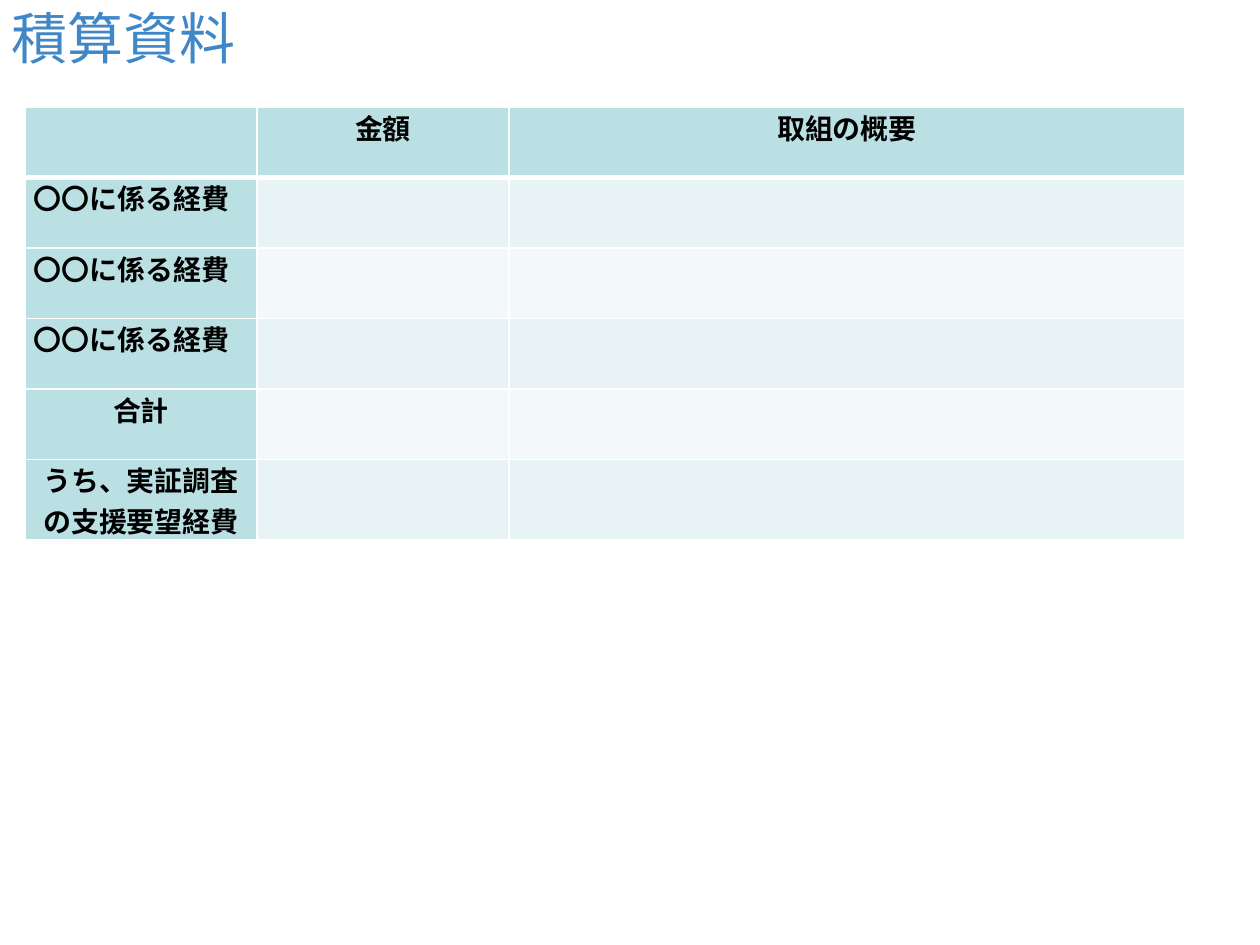
from lxml import etree
from pptx import Presentation
from pptx.dml.color import RGBColor
from pptx.enum.text import MSO_ANCHOR, MSO_AUTO_SIZE, PP_ALIGN
from pptx.oxml.ns import qn
from pptx.util import Pt

LEFT, MID, JUST = PP_ALIGN.LEFT, PP_ALIGN.CENTER, PP_ALIGN.JUSTIFY
CENTER, NO_FIT = MSO_ANCHOR.MIDDLE, MSO_AUTO_SIZE.NONE
FACE = "Noto Sans CJK JP"
HEAD, BANDS = "BBE0E3", ("F3F9FA", "E7F3F4")
COLS = (232, 252, 676)
HIGH = 423
COST = ("〇〇に係る経費", JUST)
HEADS = (("", MID), ("金額", MID), ("取組の概要", MID))
ROWS = (COST, COST, COST, ("合計", MID), ("うち、実証調査の支援要望経費", MID))


def px(num):
    """Turn pixels into EMU."""
    return round(num * 914400 / 126)


def color(code):
    """Turn a hex string into a colour."""
    return RGBColor.from_string(code)


def apply(item, form):
    """Set attributes from a dict of format values."""
    for key, val in form.items():
        setattr(item, key, val)


def write(frame, text, align, code, form):
    """Write one formatted paragraph into a text frame."""
    par = frame.paragraphs[0]
    par.alignment = align
    run = par.add_run()
    run.text = text
    apply(run.font, {"name": FACE, **form})
    run.font.color.rgb = color(code)
    etree.SubElement(run.font._element, qn("a:ea"), typeface=FACE)


def border(cell, top, base):
    """Draw white lines round a cell, with top and base widths in points."""
    props = cell._tc.get_or_add_tcPr()
    for side, wide in (("L", 1), ("R", 1), ("T", top), ("B", base)):
        line = etree.SubElement(props, qn(f"a:ln{side}"), w=str(Pt(wide)))
        fill = etree.SubElement(line, qn("a:solidFill"))
        etree.SubElement(fill, qn("a:srgbClr"), val="FFFFFF")


def add_title(slide, text):
    """Place and format the slide title."""
    title = slide.shapes.title
    apply(title, {"left": px(-1), "top": px(3), "width": px(1226), "height": px(68)})
    frame = title.text_frame
    apply(frame, {"word_wrap": True, "auto_size": NO_FIT, "vertical_anchor": CENTER})
    write(frame, text, LEFT, "4087C8", {"size": Pt(32), "bold": False})


def add_cell(table, row, col, text, align):
    """Fill one cell of the cost table."""
    cell = table.cell(row, col)
    apply(cell, {"margin_left": px(9), "margin_right": px(9),
                 "margin_top": 0, "margin_bottom": 0})
    border(cell, 3 if row == 1 else 1, 3 if row == 0 else 1)
    cell.fill.solid()
    shade = BANDS[row % 2] if row and col else HEAD
    cell.fill.fore_color.rgb = color(shade)
    if text:
        write(cell.text_frame, text, align, "000000", {"size": Pt(16), "bold": True})


def add_costs(slide):
    """Add the cost table with its heads and row names."""
    count = len(ROWS) + 1
    table = slide.shapes.add_table(count, len(COLS), px(25), px(107),
                                   px(sum(COLS)), px(HIGH)).table
    for col, wide in zip(table.columns, COLS):
        col.width = px(wide)
    grid = [HEADS] + [(name, ("", MID), ("", MID)) for name in ROWS]
    for row, line in enumerate(grid):
        for col, (text, align) in enumerate(line):
            add_cell(table, row, col, text, align)


def main():
    """Build the cost estimate slide."""
    deck = Presentation()
    apply(deck, {"slide_width": px(1260), "slide_height": px(945)})
    slide = deck.slides.add_slide(deck.slide_layouts[5])
    add_title(slide, "積算資料")
    add_costs(slide)
    deck.save("out.pptx")


if __name__ == "__main__":
    main()
